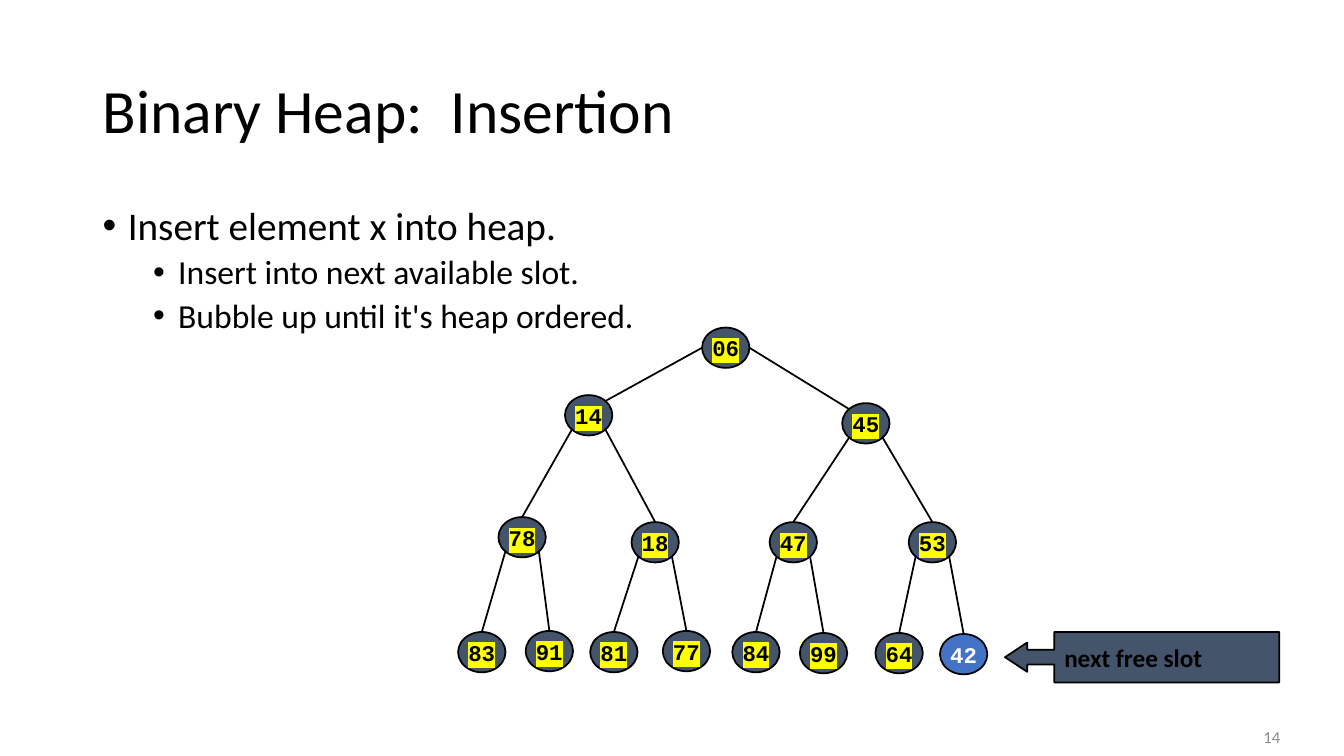
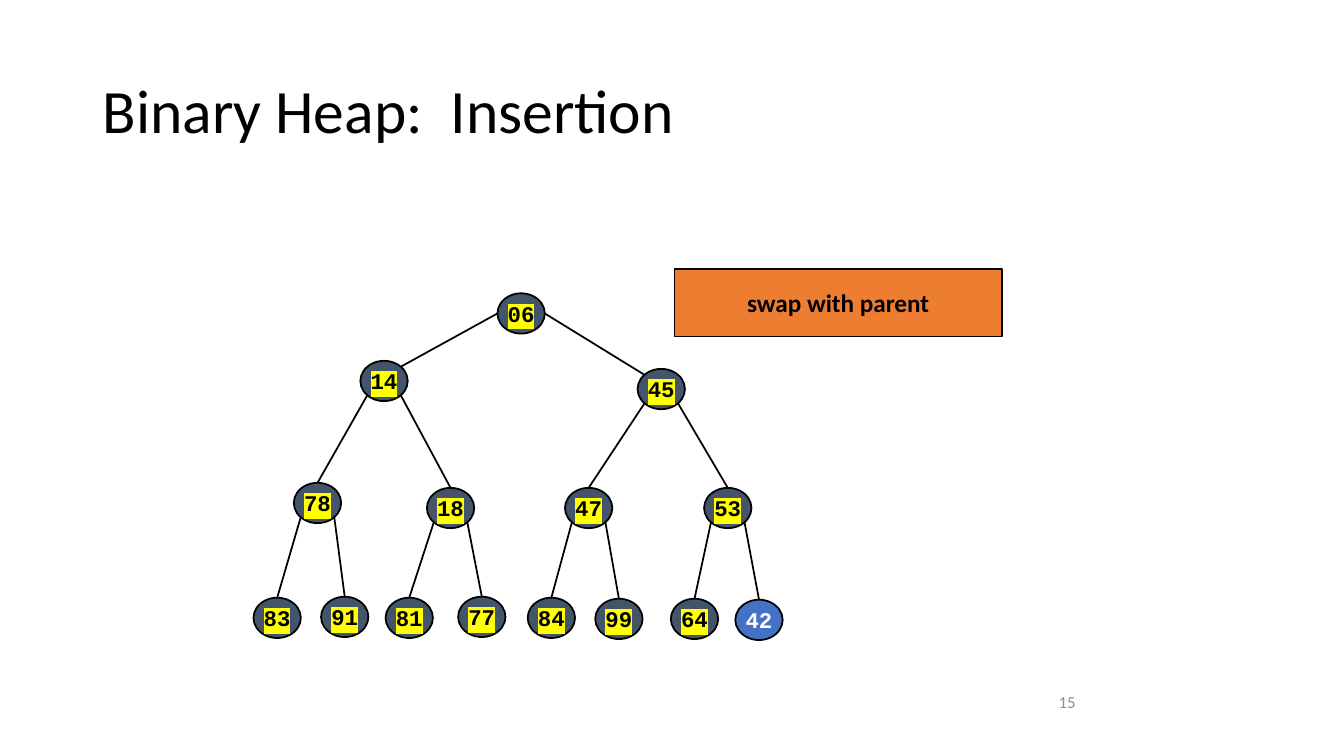
from math import sqrt

from lxml.etree import SubElement
from pptx import Presentation
from pptx.dml.color import RGBColor
from pptx.enum.shapes import MSO_CONNECTOR, MSO_SHAPE
from pptx.enum.text import MSO_ANCHOR, PP_ALIGN
from pptx.oxml.ns import qn
from pptx.util import Inches, Pt

# The grid: square cells, 133.33 columns by 75 rows
CELL = Inches(0.1)
COLUMNS, ROWS = 133.33, 75

BLACK = RGBColor(0x00, 0x00, 0x00)
WHITE = RGBColor(0xFF, 0xFF, 0xFF)
GREY = RGBColor(0x8C, 0x8C, 0x8C)
SLATE = RGBColor(0x44, 0x54, 0x6A)
BLUE = RGBColor(0x44, 0x72, 0xC4)
ORANGE = RGBColor(0xED, 0x7D, 0x31)
YELLOW = RGBColor(0xFF, 0xFF, 0x00)

TITLE = dict(size=Pt(44), name="Calibri")
NUMBER = dict(size=Pt(12), name="Calibri")
LABEL = dict(size=Pt(18), name="Calibri", bold=True)
KEY = dict(size=Pt(16), name="Courier New", bold=True)

# Heap in level order: the children of i are 2i + 1 and 2i + 2
HEAP = [
    ("06", 72.0, 34.5),
    ("14", 58.4, 41.2), ("45", 85.9, 42.0),
    ("78", 51.8, 53.3), ("18", 65.0, 53.8), ("47", 78.7, 53.8), ("53", 92.5, 53.8),
    ("83", 47.8, 64.7), ("91", 54.5, 64.6), ("81", 60.9, 64.7), ("77", 68.1, 64.6),
    ("84", 75.0, 64.7), ("99", 81.7, 64.8), ("64", 89.2, 64.8), ("42", 95.6, 64.9),
]
NEW_KEY = "42"
NODE_W, NODE_H = 4.7, 4
DIAGONAL = sqrt(0.5) / 2  # share of a node's size from its centre to its diagonal points

STEPS = [
    ("Insert element x into heap.", 28, 0.25, 10),
    ("Insert into next available slot.", 24, 0.75, 5),
    ("Bubble up until it's heap ordered.", 24, 0.75, 5),
]


def add_box(slide, box, fill=None, preset=None):
    """Add a text box, or an outlined preset shape, at (left, top, width, height) in cells."""
    place = [round(length * CELL) for length in box]
    if preset is None:
        shape = slide.shapes.add_textbox(*place)
    else:
        shape = slide.shapes.add_shape(preset, *place)
        shape.shadow.inherit = False
        shape.fill.solid()
        shape.fill.fore_color.rgb = fill
        shape.line.color.rgb = BLACK
        shape.line.width = Pt(1.25)
    shape.text_frame.word_wrap = True
    shape.text_frame.vertical_anchor = MSO_ANCHOR.MIDDLE
    return shape


def write(paragraph, text, style, color=BLACK, align=PP_ALIGN.LEFT, highlight=None):
    paragraph.alignment = align
    run = paragraph.add_run()
    run.text = text
    run.font.color.rgb = color
    if highlight is not None:
        marker = SubElement(run._r.get_or_add_rPr(), qn("a:highlight"))
        SubElement(marker, qn("a:srgbClr")).set("val", str(highlight))
    for attribute, value in style.items():
        setattr(run.font, attribute, value)


deck = Presentation()
deck.slide_width = round(COLUMNS * CELL)
deck.slide_height = ROWS * CELL

# Title, slide number and heap; the second slide moves number and heap together
slides = []
for number, shift_x, shift_y in [("14", 0, 0), ("15", -20.3, -3.4)]:
    slide = deck.slides.add_slide(deck.slide_layouts[6])
    slides.append(slide)

    title = add_box(slide, (9.2, 4, 115, 14.5)).text_frame.paragraphs[0]
    title.line_spacing = 0.9
    write(title, "Binary Heap:  Insertion", TITLE)

    page = add_box(slide, (107.2 + shift_x, 71.8 + shift_y, 20.8, 2.5))
    write(page.text_frame.paragraphs[0], number, NUMBER, GREY, PP_ALIGN.RIGHT)

    nodes = []
    for key, x, y in HEAP:
        is_new = key == NEW_KEY
        box = (x + shift_x - NODE_W / 2, y + shift_y - NODE_H / 2, NODE_W, NODE_H)
        node = add_box(slide, box, BLUE if is_new else SLATE, MSO_SHAPE.OVAL)
        node.text_frame.word_wrap = False
        write(node.text_frame.paragraphs[0], key, KEY, WHITE if is_new else BLACK,
              PP_ALIGN.CENTER, None if is_new else YELLOW)
        nodes.append(node)

    for index, child in enumerate(nodes[1:], start=1):
        parent = nodes[(index - 1) // 2]
        side = -1 if index % 2 else 1
        # Edges leave the root at its sides, every other parent at its lower diagonals
        across, down = (0.5, 0) if parent is nodes[0] else (DIAGONAL, DIAGONAL)
        start_x = round(parent.left + parent.width * (0.5 + side * across))
        start_y = round(parent.top + parent.height * (0.5 + down))
        end_x = round(child.left + child.width * (0.5 - side * DIAGONAL))
        end_y = round(child.top + child.height * (0.5 - DIAGONAL))
        edge = slide.shapes.add_connector(MSO_CONNECTOR.STRAIGHT, start_x, start_y, end_x, end_y)
        if parent is not nodes[0]:
            edge.end_connect(child, 0)
        edge.line.color.rgb = BLACK
        edge.line.width = Pt(1.25)
        SubElement(edge._element.spPr, qn("a:effectLst"))

insert_slide, swap_slide = slides

# Steps and the free slot
steps = add_box(insert_slide, (9.2, 20, 115, 47.6)).text_frame
steps.vertical_anchor = MSO_ANCHOR.TOP
for row, (text, size, indent, gap) in enumerate(STEPS):
    step = steps.add_paragraph() if row else steps.paragraphs[0]
    step.line_spacing = 0.9
    step.space_before = Pt(gap)
    properties = step._p.get_or_add_pPr()
    properties.set("marL", str(Inches(indent)))
    properties.set("indent", str(Inches(-0.25)))
    SubElement(properties, qn("a:buFont")).set("typeface", "Arial")
    SubElement(properties, qn("a:buChar")).set("char", "•")
    write(step, text, dict(size=Pt(size), name="Calibri"))

free_slot = add_box(insert_slide, (99.7, 62.7, 27.2, 5), SLATE, MSO_SHAPE.LEFT_ARROW_CALLOUT)
for index, share in enumerate([0.29, 0.29, 0.44, 0.82]):
    free_slot.adjustments[index] = share
write(free_slot.text_frame.paragraphs[0], "next free slot", LABEL)

# Swap
swap = add_box(swap_slide, (66.9, 26.7, 32.5, 6.7), ORANGE, MSO_SHAPE.RECTANGLE)
write(swap.text_frame.paragraphs[0], "swap with parent", LABEL, align=PP_ALIGN.CENTER)

deck.save("out.pptx")
